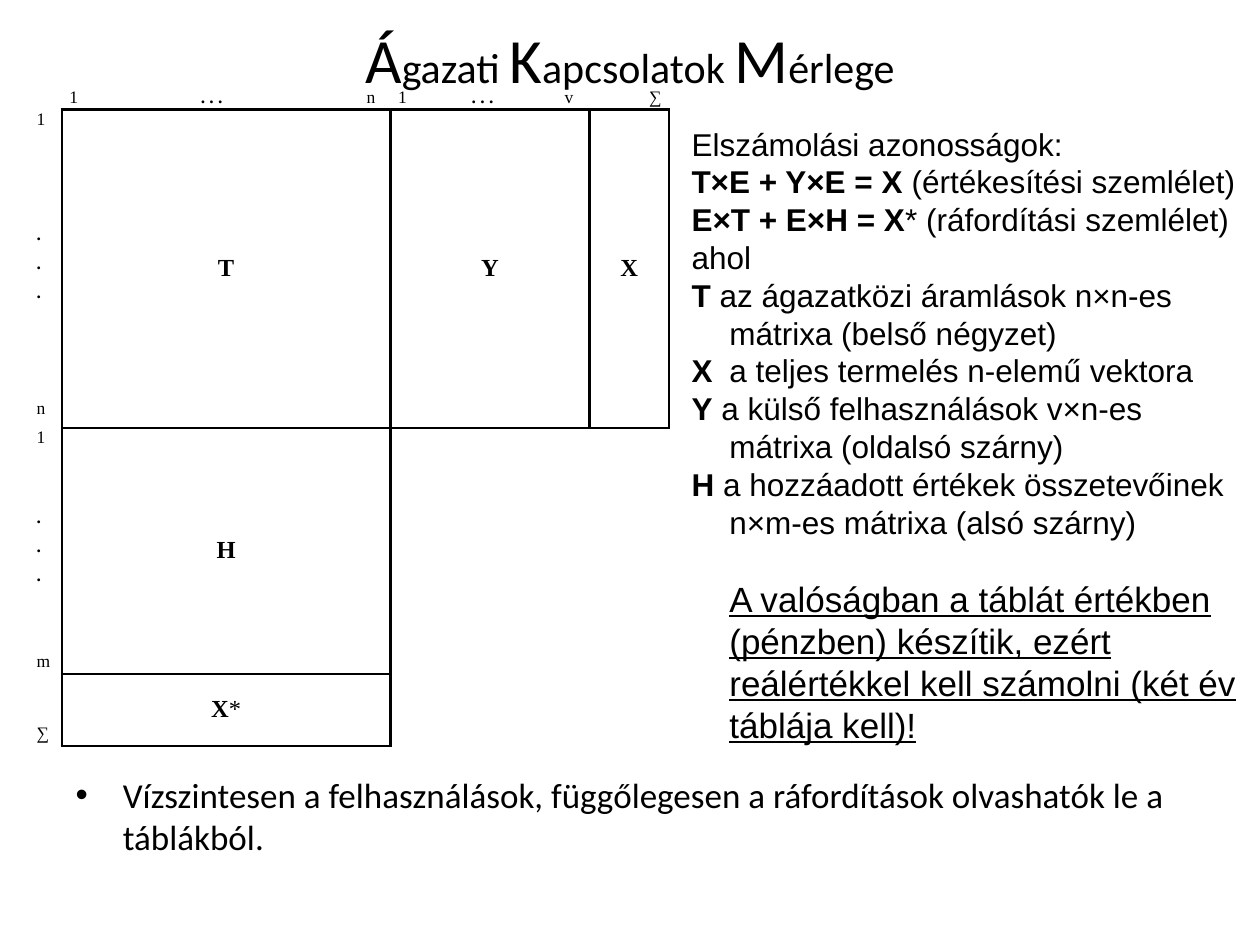
from lxml.etree import SubElement
from pptx import Presentation
from pptx.dml.color import RGBColor
from pptx.enum.text import MSO_ANCHOR as Anchor, MSO_AUTO_SIZE as AutoSize, PP_ALIGN as Align
from pptx.oxml.ns import qn
from pptx.util import Inches, Pt

THEME = {
    "ink": RGBColor(0, 0, 0), "heading": "Calibri", "prose": "Arial", "matrix": "Times New Roman",
    "initial": 36, "title": 24, "note": 20, "body": 18, "block": 14, "label": 10, "border": 1.5,
}

deck = Presentation()
deck.slide_width, deck.slide_height = Inches(10), Inches(7.5)
COL, ROW = deck.slide_width / 100, deck.slide_height / 100
slide = deck.slides.add_slide(deck.slide_layouts[1])


def write(paragraph, text, font, size, bold=False, underline=False, align=None):
    run = paragraph.add_run()
    run.text = text
    run.font.name, run.font.size = font, Pt(size)
    run.font.bold, run.font.underline = bold, underline
    run.font.color.rgb = THEME["ink"]
    if align is not None:
        paragraph.alignment = align


def place(x, y, width, height):
    return int(x * COL), int(y * ROW), int(width * COL), int(height * ROW)


title, reading = slide.shapes.title, slide.placeholders[1]
title.left, title.top, title.width, title.height = place(5, 3.07, 90, 6.27)
reading.left, reading.top, reading.width, reading.height = place(5, 81.2, 90, 10.4)
for holder in (title, reading):
    holder.text_frame.auto_size = AutoSize.NONE
title.text_frame.vertical_anchor = Anchor.MIDDLE
for word in ("Ágazati ", "Kapcsolatok ", "Mérlege"):
    for part, size in ((word[0], "initial"), (word[1:], "title")):
        write(title.text_frame.paragraphs[0], part, THEME["heading"], THEME[size], align=Align.CENTER)
write(reading.text_frame.paragraphs[0],
      "Vízszintesen a felhasználások, függőlegesen a ráfordítások olvashatók le a táblákból.",
      THEME["heading"], THEME["note"])

column_shares = (2.6, 26.1, 15.8, 6.3)
short_rows = (0, 12, 20, 21, 23)
row_shares = [2.27 if row in short_rows else 3.07 for row in range(24)]
balance = slide.shapes.add_table(
    24, 4, *place(2.3, 9.33, sum(column_shares), sum(row_shares))).table
balance.first_row = balance.horz_banding = False
for column, share in zip(balance.columns, column_shares):
    column.width = int(share * COL)
for row, share in zip(balance.rows, row_shares):
    row.height = int(share * ROW)

blocks = [(1, 11, 1), (1, 11, 2), (1, 11, 3), (12, 20, 1), (21, 23, 1)]
across = {(edge, c) for first, last, c in blocks for edge in (first, last + 1)}
down = {(r, edge) for first, last, c in blocks
        for r in range(first, last + 1) for edge in (c, c + 1)}

row_labels = {1: "1", 5: ".", 6: ".", 7: ".", 11: "n", 12: "1",
              15: ".", 16: ".", 17: ".", 20: "m", 23: "∑"}
labels = {(r, 0): [(mark, mark == ".")] for r, mark in row_labels.items()}
labels[0, 1] = [("1\t", False), (". . .", True), ("\tn", False)]
labels[0, 2] = [("1\t", False), (". . .", True), ("\tv", False)]
labels[0, 3] = [("∑", False)]
names = {(6, 1): [("T", True)], (6, 2): [("Y", True)], (6, 3): [("X", True)],
         (16, 1): [("H", True)], (22, 1): [("X", True), ("*", False)]}
tab_stops = {(0, 1): (11.3, 24.3), (0, 2): (6.7, 13.9)}

for r in range(24):
    for c in range(4):
        cell = balance.cell(r, c)
        cell.margin_left = cell.margin_right = Inches(0.06)
        cell.margin_top = cell.margin_bottom = 0
        properties = cell._tc.get_or_add_tcPr()
        for side, drawn in (("L", (r, c) in down), ("R", (r, c + 1) in down),
                            ("T", (r, c) in across), ("B", (r + 1, c) in across)):
            line = SubElement(properties, qn("a:ln" + side), w=str(Pt(THEME["border"])))
            fill = SubElement(line, qn("a:solidFill" if drawn else "a:noFill"))
            if drawn:
                SubElement(fill, qn("a:srgbClr"), val=str(THEME["ink"]))
        cell.fill.background()

        entry = cell.text_frame.paragraphs[0]
        for text, bold in labels.get((r, c), []):
            write(entry, text, THEME["matrix"], THEME["label"], bold=bold,
                  align=Align.RIGHT if c == 3 else Align.LEFT)
        for text, bold in names.get((r, c), []):
            write(entry, text, THEME["matrix"], THEME["block"], bold=bold, align=Align.CENTER)
        if (r, c) in tab_stops:
            stops = SubElement(entry._p.get_or_add_pPr(), qn("a:tabLst"))
            for stop, kind in zip(tab_stops[r, c], ("ctr", "r")):
                SubElement(stops, qn("a:tab"), pos=str(int(stop * COL)), algn=kind)
        if not entry.runs:
            SubElement(entry._p, qn("a:endParaRPr"), sz=str(THEME["label"] * 100))

identities = [
    ("", "Elszámolási azonosságok:", False),
    ("T×E + Y×E = X", " (értékesítési szemlélet)", False),
    ("E×T + E×H = X", "* (ráfordítási szemlélet)", False),
    ("", "ahol", False),
    ("T", " az ágazatközi áramlások n×n-es mátrixa (belső négyzet)", True),
    ("X", "\ta teljes termelés n-elemű vektora", True),
    ("Y", " a külső felhasználások v×n-es mátrixa (oldalsó szárny)", True),
    ("H", " a hozzáadott értékek összetevőinek n×m-es mátrixa (alsó szárny)", True),
]
explanation = slide.shapes.add_textbox(*place(53.9, 12.53, 46.1, 67.73)).text_frame
explanation.word_wrap = True
hanging = int(3 * COL)
for number, (symbol, meaning, hangs) in enumerate(identities):
    paragraph = explanation.add_paragraph() if number else explanation.paragraphs[0]
    if hangs:
        indent = paragraph._p.get_or_add_pPr()
        indent.set("marL", str(hanging))
        indent.set("indent", str(-hanging))
    if symbol:
        write(paragraph, symbol, THEME["prose"], THEME["body"], bold=True)
    write(paragraph, meaning, THEME["prose"], THEME["body"])

warning = explanation.add_paragraph()
warning.space_before = Pt(21)
warning._p.get_or_add_pPr().set("marL", str(hanging))
write(warning, "A valóságban a táblát értékben (pénzben) készítik, ezért reálértékkel "
      "kell számolni (két év táblája kell)!", THEME["prose"], THEME["note"], underline=True)

deck.save("out.pptx")
